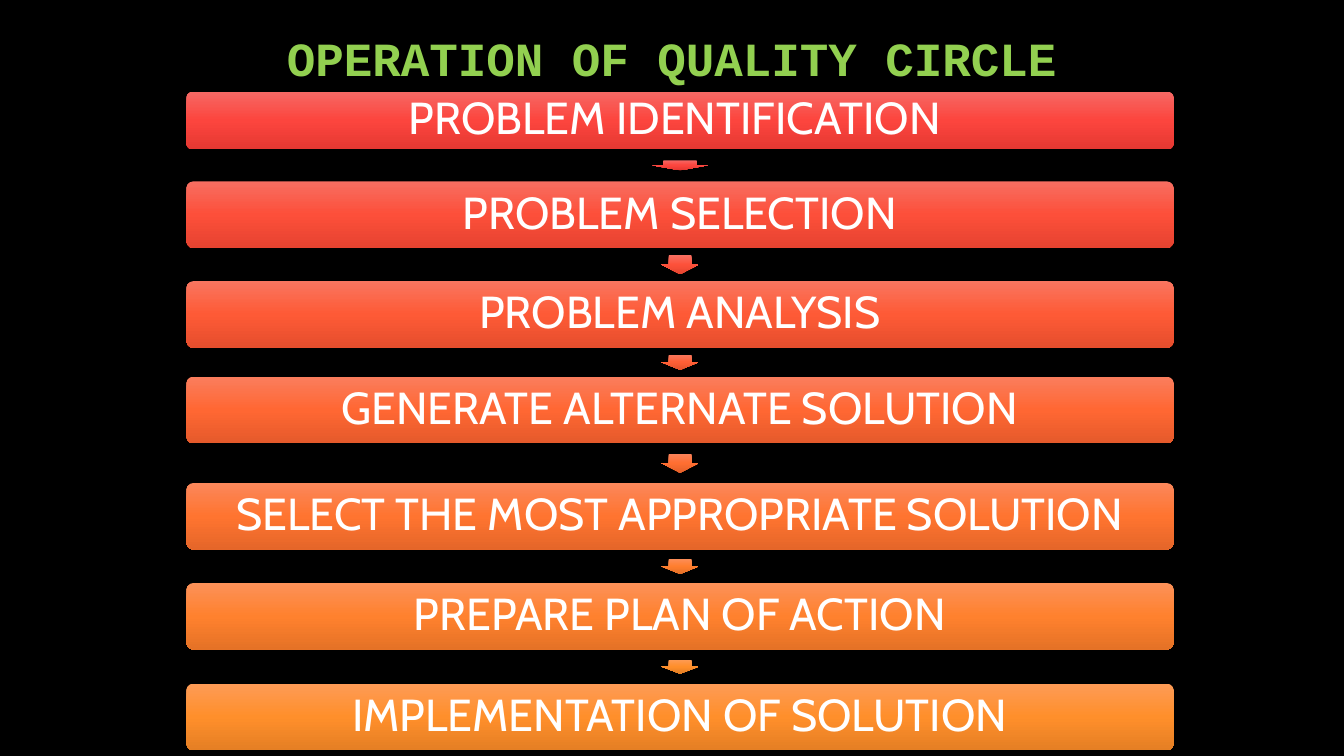
"""Build the slide on how a quality circle works, as a chain of seven steps."""
from dataclasses import dataclass
from itertools import pairwise
from typing import NamedTuple

from lxml.etree import SubElement as sub
from pptx import Presentation as Deck
from pptx.dml.color import RGBColor as Rgb
from pptx.enum.shapes import MSO_SHAPE as Kind
from pptx.enum.text import MSO_ANCHOR as Anchor, PP_ALIGN as Align
from pptx.oxml.ns import qn
from pptx.shapes.autoshape import Shape
from pptx.slide import Slide
from pptx.util import Emu, Inches, Pt

WIDE, HIGH = Inches(13.3333), Inches(7.5)
LEFT, SPAN = 13.88, 73.44
INSET = Inches(0.13)
BLACK = Rgb(0x00, 0x00, 0x00)
WHITE = Rgb(0xFF, 0xFF, 0xFF)
GREEN = Rgb(0x92, 0xD0, 0x50)


class Tint(NamedTuple):
    top: Rgb
    mid: Rgb
    low: Rgb


@dataclass(frozen=True)
class Step:
    text: str
    top: float
    tint: Tint
    high: float = 8.8

    @property
    def end(self) -> float:
        return self.top + self.high


@dataclass(frozen=True)
class Arrow:
    tint: Tint
    long: float
    wide: float = 2.78


def tint(top: str, mid: str, low: str) -> Tint:
    return Tint(*map(Rgb.from_string, (top, mid, low)))


RED = tint("F66864", "FC453E", "E53832")
AMBER = tint("FD9B56", "FF8F2B", "E57F24")

STEPS = (
    Step("PROBLEM IDENTIFICATION ", 12.13, RED, 7.6),
    Step("PROBLEM SELECTION", 24, tint("F76E61", "FD4F3A", "E54330")),
    Step("PROBLEM ANALYSIS", 37.2, tint("F9755F", "FE5A36", "E54E2D")),
    Step("GENERATE ALTERNATE SOLUTION", 49.83, tint("FA7D5D", "FF6733", "E55A2B")),
    Step("SELECT THE MOST APPROPRIATE SOLUTION", 63.9, tint("FB875A", "FF7430", "E56629")),
    Step("PREPARE PLAN OF ACTION", 77.13, tint("FC9158", "FF812E", "E57226")),
    Step("IMPLEMENTATION OF SOLUTION", 90.43, AMBER),
)
ARROWS = (
    Arrow(RED, 1.33, 4.13),
    Arrow(tint("F86F61", "FD513A", "E5452F"), 2.53),
    Arrow(tint("F9785E", "FF5F35", "E5532C"), 2),
    Arrow(tint("FA835B", "FF6E31", "E5612A"), 2.53),
    Arrow(tint("FC8E59", "FF7E2E", "E57027"), 2),
    Arrow(AMBER, 1.87),
)


def col(share: float) -> Emu:
    return Emu(round(WIDE * share / 100))


def row(share: float) -> Emu:
    return Emu(round(HIGH * share / 100))


def write(shape: Shape, text: str, *, font: str, size: float, ink: Rgb,
          bold: bool = False, anchor: Anchor = Anchor.MIDDLE) -> None:
    frame = shape.text_frame
    frame.word_wrap = True
    frame.vertical_anchor = anchor
    para = frame.paragraphs[0]
    para.alignment = Align.CENTER
    para.line_spacing = 0.9
    run = para.add_run()
    run.text = text
    run.font.name = font
    run.font.size = Pt(size)
    run.font.bold = bold
    run.font.color.rgb = ink


def paint(shape: Shape, shade: Tint) -> None:
    shape.shadow.inherit = False
    shape.line.fill.background()
    shape.fill.gradient()
    shape.fill.gradient_angle = 270
    grad = shape.fill._xPr.find(qn("a:gradFill"))
    grad.set("rotWithShape", "0")
    stops = grad.find(qn("a:gsLst"))
    stops.clear()
    for place, hue in zip((0, 50000, 100000), shade):
        stop = sub(stops, qn("a:gs"), pos=str(place))
        sub(stop, qn("a:srgbClr"), val=str(hue))


def draw_step(slide: Slide, step: Step) -> None:
    bar = slide.shapes.add_shape(Kind.ROUNDED_RECTANGLE, col(LEFT), row(step.top),
                                 col(SPAN), row(step.high))
    bar.adjustments[0] = 0.1
    paint(bar, step.tint)
    frame = bar.text_frame
    frame.margin_left = frame.margin_right = INSET
    frame.margin_top = frame.margin_bottom = INSET
    write(bar, step.text, font="Cabin", size=32, ink=WHITE)


def draw_arrow(slide: Slide, arrow: Arrow, above: Step, below: Step) -> None:
    long, wide = row(arrow.long), col(arrow.wide)
    mid_x = col(LEFT + SPAN / 2)
    mid_y = row((above.end + below.top) / 2)
    head = slide.shapes.add_shape(Kind.RIGHT_ARROW, mid_x - long // 2,
                                  mid_y - wide // 2, long, wide)
    head.rotation = 90
    head.adjustments[0] = 0.6
    head.adjustments[1] = 0.5
    paint(head, arrow.tint)


def main() -> None:
    deck = Deck()
    deck.slide_width, deck.slide_height = WIDE, HIGH
    slide = deck.slides.add_slide(deck.slide_layouts[6])
    back = slide.background.fill
    back.solid()
    back.fore_color.rgb = BLACK
    title = slide.shapes.add_textbox(col(12.5), row(3.47), col(75), row(8.67))
    write(title, "OPERATION OF QUALITY CIRCLE", font="Courier New", size=34,
          ink=GREEN, bold=True, anchor=Anchor.BOTTOM)
    for step in STEPS:
        draw_step(slide, step)
    for arrow, (above, below) in zip(ARROWS, pairwise(STEPS)):
        draw_arrow(slide, arrow, above, below)
    deck.save("out.pptx")


if __name__ == "__main__":
    main()
